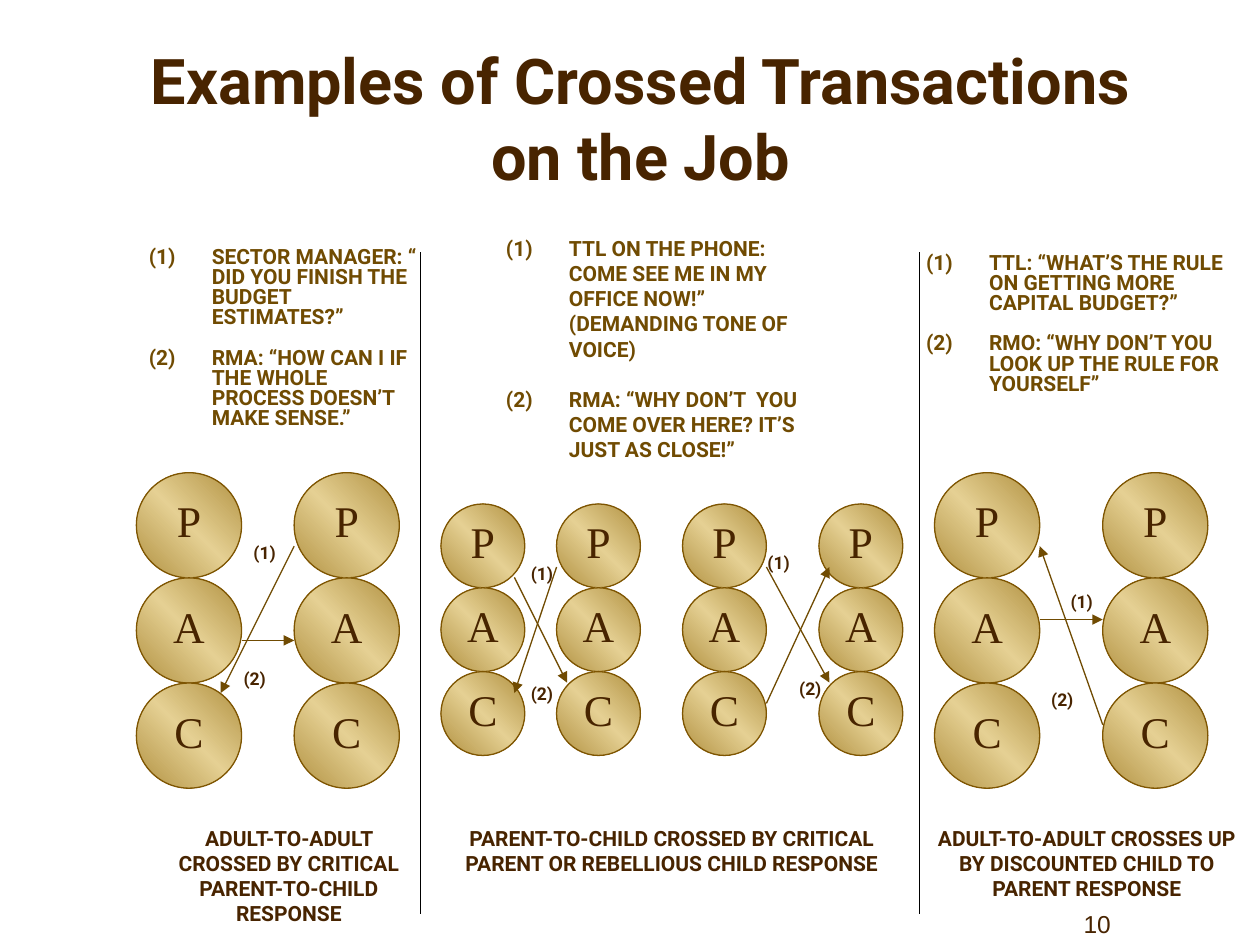
from dataclasses import dataclass

from lxml import etree
from pptx import Presentation
from pptx.dml.color import RGBColor
from pptx.enum.shapes import MSO_CONNECTOR, MSO_SHAPE
from pptx.enum.text import MSO_ANCHOR, PP_ALIGN
from pptx.oxml import parse_xml
from pptx.oxml.ns import nsdecls, qn
from pptx.util import Cm, Pt

STRAIGHT = MSO_CONNECTOR.STRAIGHT
OVAL = MSO_SHAPE.OVAL
TOP, MIDDLE, BOTTOM = MSO_ANCHOR.TOP, MSO_ANCHOR.MIDDLE, MSO_ANCHOR.BOTTOM
LEFT, CENTER = PP_ALIGN.LEFT, PP_ALIGN.CENTER


@dataclass(frozen=True)
class Theme:
    """Colours, fonts and sizes used on the page."""

    dark: str = "482400"
    brown: str = "704B02"
    rim: str = "7E5502"
    gold: str = "B09040"
    light: str = "E5D093"
    rule: str = "000000"
    sans: str = "Roboto"
    serif: str = "Times New Roman"
    number: str = "Arial"
    title_size: int = 36
    state_size: int = 25
    number_size: int = 14
    body_size: int = 12
    label_size: int = 10
    line_width: float = 0.75


THEME = Theme()

LARGE, SMALL = 2.12, 1.69
LARGE_TOP, SMALL_TOP = 9.53, 10.16
STACKS = [
    (2.75, LARGE_TOP, LARGE), (5.93, LARGE_TOP, LARGE),
    (8.89, SMALL_TOP, SMALL), (11.22, SMALL_TOP, SMALL),
    (13.76, SMALL_TOP, SMALL), (16.51, SMALL_TOP, SMALL),
    (18.84, LARGE_TOP, LARGE), (22.23, LARGE_TOP, LARGE),
]
ARROWS = [
    (4.87, 12.91, 5.93, 12.91), (5.93, 11.01, 4.45, 13.97),
    (10.37, 11.64, 11.43, 13.76), (11.22, 11.43, 10.37, 13.97),
    (15.45, 11.43, 16.72, 13.76), (15.45, 14.18, 16.72, 11.43),
    (20.96, 12.49, 22.23, 12.49), (22.23, 14.61, 20.96, 11.01),
]
LABELS = [
    ("(1)", 4.7, 10.8), ("(2)", 4.5, 13.34),
    ("(1)", 10.29, 11.23), ("(2)", 10.29, 13.64),
    ("(1)", 15.06, 11), ("(2)", 15.7, 13.54),
    ("(1)", 21.17, 11.79), ("(2)", 20.78, 13.77),
]
DIALOGUES = [
    ((2.75, 4.88, 5.93, 4.37), 0.8, 11.5, [
        "SECTOR MANAGER: “ DID YOU FINISH THE BUDGET ESTIMATES?”",
        "RMA: “HOW CAN I IF THE WHOLE PROCESS DOESN’T MAKE SENSE.”",
    ]),
    ((9.95, 4.62, 6.56, 5.38), 1.0, 14.3, [
        "TTL ON THE PHONE: COME SEE ME IN MY OFFICE NOW!” (DEMANDING TONE OF VOICE)",
        "RMA: “WHY DON’T  YOU COME OVER HERE? IT’S JUST AS CLOSE!”",
    ]),
    ((18.42, 5, 6.56, 3.53), 0.8, 11.5, [
        "TTL: “WHAT’S THE RULE ON GETTING MORE CAPITAL BUDGET?”",
        "RMO: “WHY DON’T YOU LOOK UP THE RULE FOR YOURSELF”",
    ]),
]
CAPTIONS = [
    ("ADULT-TO-ADULT CROSSED BY CRITICAL PARENT-TO-CHILD RESPONSE",
     (3.18, 16.51, 5.29, 2.29)),
    ("PARENT-TO-CHILD CROSSED BY CRITICAL PARENT OR REBELLIOUS CHILD RESPONSE",
     (8.89, 16.51, 9.31, 1.78)),
    ("ADULT-TO-ADULT CROSSES UP BY DISCOUNTED CHILD TO PARENT RESPONSE",
     (18.42, 16.51, 6.98, 1.78)),
]


def add_span(para, text, size, color, font=THEME.sans, bold=True):
    """Append one styled run to a paragraph."""
    span = para.add_run()
    span.text = text
    span.font.name = font
    span.font.size = Pt(size)
    span.font.bold = bold
    span.font.color.rgb = RGBColor.from_string(color)


def add_box(page, area, anchor=TOP):
    """Add an empty wrapping text box and return its text frame."""
    frame = page.shapes.add_textbox(*map(Cm, area)).text_frame
    frame.word_wrap = True
    frame.vertical_anchor = anchor
    return frame


def add_text(page, text, area, size, anchor=TOP, font=THEME.sans, bold=True):
    """Add a centred dark text box of one paragraph."""
    para = add_box(page, area, anchor).paragraphs[0]
    para.alignment = CENTER
    add_span(para, text, size, THEME.dark, font, bold)


def add_dialogue(page, area, spacing, gap, lines):
    """Add a numbered exchange with hanging indents."""
    frame = add_box(page, area)
    for index, line in enumerate(lines):
        para = frame.add_paragraph() if index else frame.paragraphs[0]
        para.alignment = LEFT
        para.line_spacing = spacing
        if index:
            para.space_before = Pt(gap)
        properties = para._p.get_or_add_pPr()
        properties.set("marL", str(Cm(1.27)))
        properties.set("indent", str(-Cm(1.27)))
        number = etree.SubElement(properties, qn("a:buAutoNum"))
        number.set("type", "arabicParenBoth")
        add_span(para, line, THEME.body_size, THEME.brown)


def fill_gold(shape):
    """Give a shape the diagonal gold gradient."""
    stops = "".join(
        f'<a:gs pos="{position}"><a:srgbClr val="{color}"/></a:gs>'
        for position, color in ((0, THEME.gold), (50000, THEME.light), (100000, THEME.gold))
    )
    gradient = parse_xml(
        f'<a:gradFill {nsdecls("a")} rotWithShape="1"><a:gsLst>{stops}</a:gsLst>'
        '<a:lin ang="18900000" scaled="0"/></a:gradFill>'
    )
    shape._element.spPr.find(qn("a:prstGeom")).addnext(gradient)


def add_stack(page, left, top, size):
    """Add the Parent, Adult and Child circles of one person."""
    for row, state in enumerate("PAC"):
        circle = page.shapes.add_shape(OVAL, Cm(left), Cm(top + row * size), Cm(size), Cm(size))
        circle.shadow.inherit = False
        fill_gold(circle)
        circle.line.color.rgb = RGBColor.from_string(THEME.rim)
        circle.line.width = Pt(THEME.line_width)
        circle.text_frame.vertical_anchor = MIDDLE
        para = circle.text_frame.paragraphs[0]
        para.alignment = CENTER
        para.line_spacing = 0.8
        add_span(para, state, THEME.state_size, THEME.dark, THEME.serif, False)


def add_line(page, ends, color, arrow=False):
    """Add a straight line, with an arrowhead at its end if wanted."""
    line = page.shapes.add_connector(STRAIGHT, *map(Cm, ends))
    line.line.color.rgb = RGBColor.from_string(color)
    line.line.width = Pt(THEME.line_width)
    properties = line._element.spPr
    if arrow:
        head = etree.SubElement(properties.find(qn("a:ln")), qn("a:tailEnd"))
        head.set("type", "triangle")
    etree.SubElement(properties, qn("a:effectLst"))


def main():
    """Build the page and save the deck."""
    deck = Presentation()
    deck.slide_width, deck.slide_height = Cm(25.4), Cm(19.05)
    page = deck.slides.add_slide(deck.slide_layouts[6])
    add_text(page, "Examples of Crossed Transactions on the Job",
             (2.12, 1.73, 21.59, 2.29), THEME.title_size, BOTTOM)
    for stack in STACKS:
        add_stack(page, *stack)
    for dialogue in DIALOGUES:
        add_dialogue(page, *dialogue)
    for text, area in CAPTIONS:
        add_text(page, text, area, THEME.body_size)
    for ends in ARROWS:
        add_line(page, ends, THEME.brown, arrow=True)
    for text, left, top in LABELS:
        add_text(page, text, (left, top, 1.27, 0.76), THEME.label_size)
    for x in (8.47, 18.54):
        add_line(page, (x, 5.08, x, 18.42), THEME.rule)
    add_text(page, "10", (19.48, 17.78, 5.28, 1.27), THEME.number_size,
             BOTTOM, THEME.number, False)
    deck.save("out.pptx")


if __name__ == "__main__":
    main()
